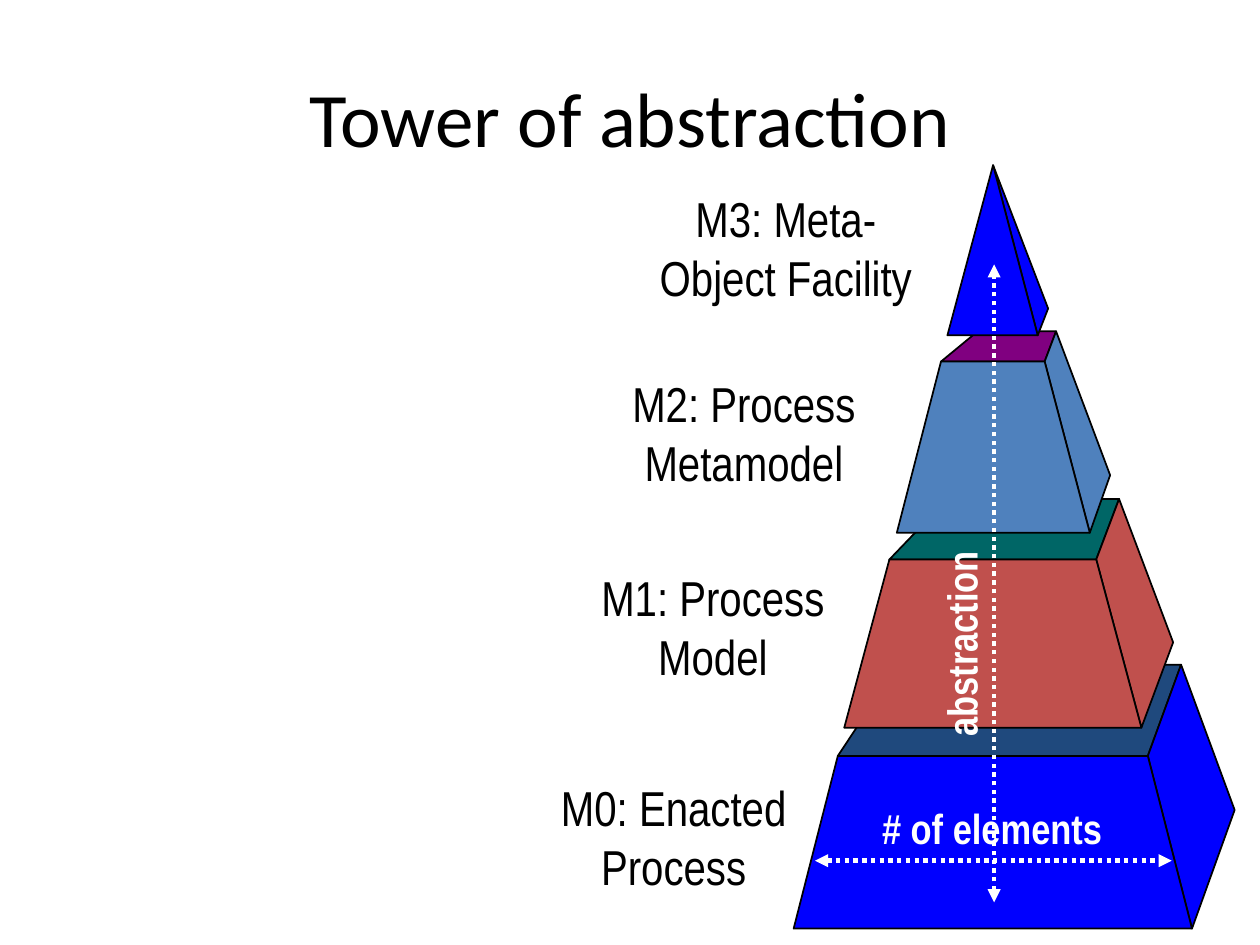
from lxml.etree import SubElement
from pptx import Presentation
from pptx.dml.color import RGBColor
from pptx.enum.dml import MSO_LINE
from pptx.enum.shapes import MSO_CONNECTOR as CONN
from pptx.enum.text import MSO_ANCHOR as ANCHOR, PP_ALIGN as ALIGN
from pptx.oxml.ns import qn
from pptx.util import Cm, Pt

BLACK, WHITE, BLUE = "000000", "FFFFFF", "0000FF"

# front: left, right, bottom; rim: left, right, y; back: left, right, y; corner: x, y
TIERS = [
    ((16.0, 24.03, 18.72), (16.89, 23.14, 15.24), (18.11, 23.81, 13.4), (24.89, 16.33), BLUE, "1F497D"),
    ((17.02, 23.01, 14.67), (17.93, 22.1, 11.28), (19.1, 22.56, 10.06), (23.65, 12.95), "C0504D", "006666"),
    ((18.08, 21.97, 10.74), (18.97, 21.06, 7.29), (19.71, 21.29, 6.68), (22.38, 9.58), "4F81BD", "800080"),
    ((19.1, 20.92, 6.76), (20.02, 20.02, 3.33), (20.02, 20.02, 3.33), (21.13, 6.22), BLUE, None),
]
LEVELS = [
    (("M0: Enacted", "Process"), 11.0, 15.52, 5.16, False),
    (("M1: Process Model",), 10.67, 11.3, 7.4, True),
    (("M2: Process Metamodel",), 11.35, 7.39, 7.29, True),
    (("M3: Meta- Object Facility",), 12.83, 3.66, 6.02, True),
]


def rgb(value):
    """Turn a hex string into a colour."""
    return RGBColor.from_string(value)


def add_run(p, text, font, size, color, bold=False):
    """Add one formatted run to a paragraph."""
    r = p.add_run()
    r.text = text
    r.font.name, r.font.size, r.font.bold = font, Pt(size), bold
    r.font.color.rgb = rgb(color)


def add_title(s, text):
    """Place and fill the title placeholder."""
    sp = s.shapes.title
    sp.left, sp.top, sp.width, sp.height = Cm(1.27), Cm(0.76), Cm(22.86), Cm(3.18)
    sp.text_frame.vertical_anchor = ANCHOR.MIDDLE
    p = sp.text_frame.paragraphs[0]
    p.alignment = ALIGN.CENTER
    add_run(p, text, "Calibri", 44, BLACK)


def add_label(s, lines, x, y, w, h, size=28, color=BLACK, bold=False, wrap=True, angle=0):
    """Add a centred text box with one paragraph per line."""
    sp = s.shapes.add_textbox(Cm(x), Cm(y), Cm(w), Cm(h))
    sp.rotation = angle
    tf = sp.text_frame
    tf.word_wrap = wrap
    tf.margin_left = tf.margin_right = Cm(0.3)
    tf.margin_top = tf.margin_bottom = Cm(0.15)
    for i, line in enumerate(lines):
        p = tf.add_paragraph() if i else tf.paragraphs[0]
        p.alignment = ALIGN.CENTER
        add_run(p, line, "Arial Narrow", size, color, bold)


def add_face(s, points, fill):
    """Add one outlined polygon."""
    start, *rest = [(Cm(x), Cm(y)) for x, y in points]
    builder = s.shapes.build_freeform(*start)
    builder.add_line_segments(rest, close=True)
    sp = builder.convert_to_shape()
    sp.shadow.inherit = False
    sp.fill.solid()
    sp.fill.fore_color.rgb = rgb(fill)
    sp.line.color.rgb = rgb(BLACK)
    sp.line.width = Pt(1)


def add_tier(s, front, rim, back, corner, fill, top_fill):
    """Add the top, side and front faces of one pyramid tier."""
    (fl, fr, fy), (rl, rr, ry), (bl, br, by) = front, rim, back
    if top_fill:
        add_face(s, [(rl, ry), (rr, ry), (br, by), (bl, by)], top_fill)
    add_face(s, [(fr, fy), corner, (br, by), (rr, ry)], fill)
    add_face(s, [(fl, fy), (fr, fy), (rr, ry), (rl, ry)], fill)


def add_arrow(s, x1, y1, x2, y2):
    """Add a dotted white line with a triangle at both ends."""
    c = s.shapes.add_connector(CONN.STRAIGHT, Cm(x1), Cm(y1), Cm(x2), Cm(y2))
    c.line.color.rgb = rgb(WHITE)
    c.line.width = Pt(2.5)
    c.line.dash_style = MSO_LINE.ROUND_DOT
    ln = c.line._get_or_add_ln()
    for end in ("a:headEnd", "a:tailEnd"):
        SubElement(ln, qn(end), type="triangle")
    SubElement(c._element.spPr, qn("a:effectLst"))


def main():
    """Build the slide and save it."""
    prs = Presentation()
    prs.slide_width, prs.slide_height = Cm(25.4), Cm(19.05)
    s = prs.slides.add_slide(prs.slide_layouts[5])
    add_title(s, "Tower of abstraction")
    for tier in TIERS:
        add_tier(s, *tier)
    for lines, x, y, w, wrap in LEVELS:
        add_label(s, lines, x, y, w, 2.67, wrap=wrap)
    add_arrow(s, 20.04, 18.19, 20.04, 5.33)
    add_arrow(s, 16.43, 17.35, 23.62, 17.35)
    add_label(s, ["abstraction"], 17.12, 12.32, 4.5, 1.32, 24, WHITE, True, angle=270)
    add_label(s, ["# of elements"], 17.42, 16.03, 5.16, 1.32, 24, WHITE, True)
    prs.save("out.pptx")


if __name__ == "__main__":
    main()
